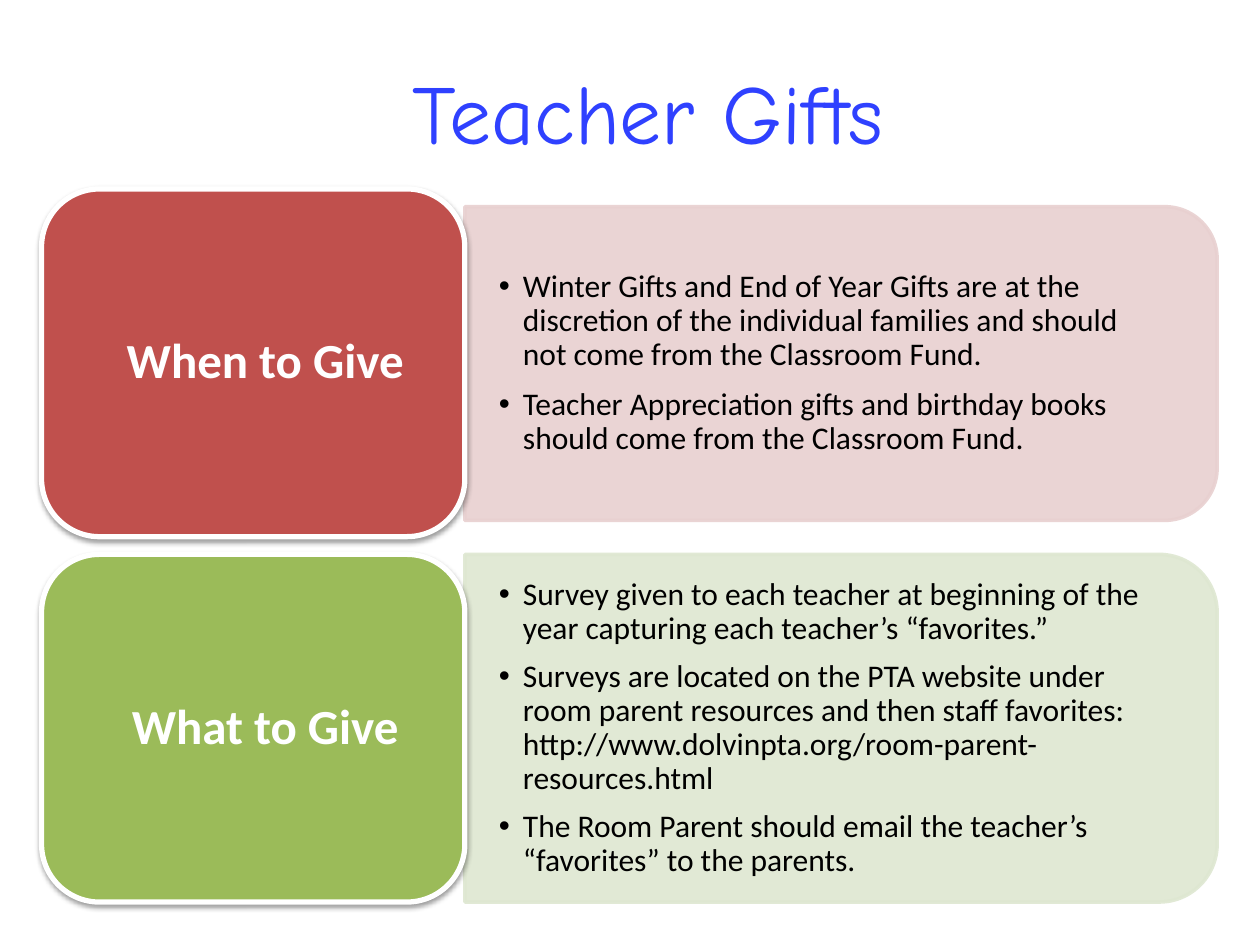
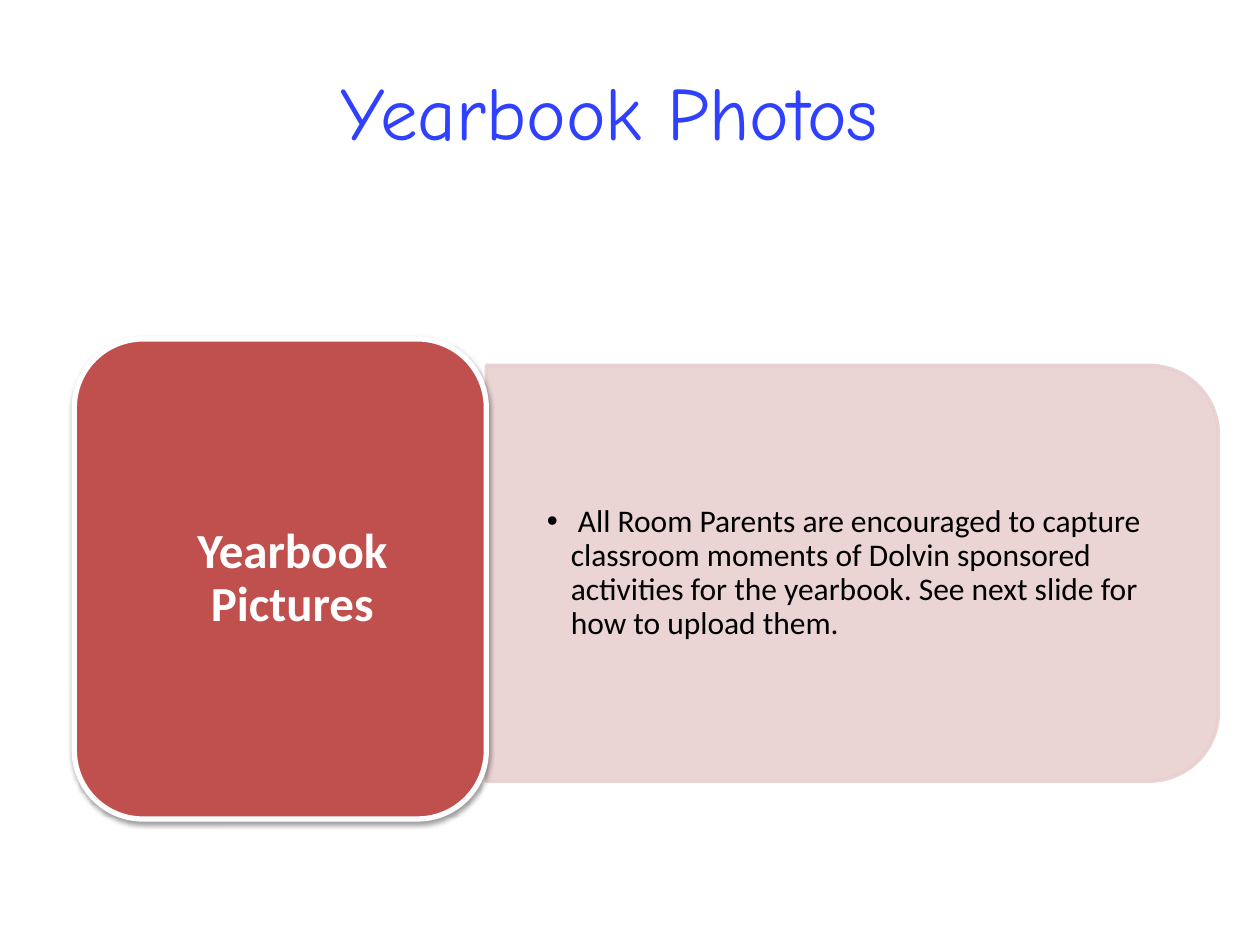
from dataclasses import dataclass

from lxml import etree
from pptx import Presentation
from pptx.dml.color import RGBColor
from pptx.enum.shapes import MSO_SHAPE
from pptx.enum.text import MSO_ANCHOR, MSO_AUTO_SIZE, PP_ALIGN
from pptx.oxml.ns import qn
from pptx.util import Inches, Pt

ROUND_RECT = MSO_SHAPE.ROUNDED_RECTANGLE
ROUND_TOP = MSO_SHAPE.ROUND_2_SAME_RECTANGLE
MIDDLE = MSO_ANCHOR.MIDDLE
NO_FIT = MSO_AUTO_SIZE.NONE
CENTER = PP_ALIGN.CENTER

BLUE = RGBColor(0x2F, 0x41, 0xFF)
RED = RGBColor(0xC0, 0x50, 0x4D)
PALE_RED = RGBColor(0xE8, 0xD0, 0xD0)
GREEN = RGBColor(0x9B, 0xBB, 0x59)
PALE_GREEN = RGBColor(0xDE, 0xE7, 0xD1)
WHITE = RGBColor(0xFF, 0xFF, 0xFF)
BLACK = RGBColor(0, 0, 0)

TITLE_FONT = "Comic Neue"
BODY_FONT = "Calibri"
ONE_CONTENT, TWO_CONTENT = 1, 3
CORNER_INSET = 0.0488
HANGING = 0.19


@dataclass
class Topic:
    """A coloured label with a pale panel of bullets to its right."""
    label: str
    bullets: list
    color: RGBColor
    pale: RGBColor
    left: float
    top: float
    width: float
    height: float
    panel_top: float
    panel_width: float
    panel_height: float
    indent: float = HANGING
    gap: float = 8.9


GIFT_TOPICS = [
    Topic("When to Give", [
        "Winter Gifts and End of Year Gifts are at the discretion of the "
        "individual families and should not come from the Classroom Fund.",
        "Teacher Appreciation gifts and birthday books should come from the "
        "Classroom Fund.",
    ], RED, PALE_RED, 0.33, 1.5, 3.36, 2.76, 1.64, 5.97, 2.49),
    Topic("What to Give", [
        "Survey given to each teacher at beginning of the year capturing each "
        "teacher’s “favorites.”",
        "Surveys are located on the PTA website under room parent resources and "
        "then staff favorites: http://www.dolvinpta.org/room-parent-resources.html",
        "The Room Parent should email the teacher’s “favorites” to the parents.",
    ], GREEN, PALE_GREEN, 0.33, 4.4, 3.36, 2.76, 4.4, 5.97, 2.76, gap=8),
]
YEARBOOK_TOPICS = [
    Topic("Yearbook Pictures", [
        " All Room Parents are encouraged to capture classroom moments of Dolvin "
        "sponsored activities for the yearbook. See next slide for how to upload "
        "them.",
    ], RED, PALE_RED, 0.59, 2.69, 3.27, 3.81, 2.9, 5.81, 3.3, indent=0.4, gap=6),
]


def place(shape, left, top, width, height):
    """Move a shape to a box given in inches."""
    shape.left, shape.top = Inches(left), Inches(top)
    shape.width, shape.height = Inches(width), Inches(height)


def set_frame(frame, side, edge):
    """Wrap and centre a text frame vertically with the given insets."""
    frame.word_wrap = True
    frame.auto_size = NO_FIT
    frame.vertical_anchor = MIDDLE
    frame.margin_left = frame.margin_right = Inches(side)
    frame.margin_top = frame.margin_bottom = Inches(edge)


def style_runs(paragraph, font, size, color, bold=False):
    """Format every run of a paragraph."""
    for run in paragraph.runs:
        run.font.name, run.font.size, run.font.bold = font, Pt(size), bold
        run.font.color.rgb = color


def space_paragraph(paragraph, indent, first_line, after):
    """Set indents in inches and tight line spacing."""
    paragraph.line_spacing = 0.9
    paragraph.space_before = Pt(0)
    paragraph.space_after = Pt(after)
    properties = paragraph._p.get_or_add_pPr()
    properties.set("marL", str(Inches(indent)))
    properties.set("indent", str(Inches(first_line)))


def add_drop_shadow(shape):
    """Give a shape a soft shadow straight below it."""
    shape.shadow.inherit = False
    effects = shape._element.spPr.find(qn("a:effectLst"))
    shadow = etree.SubElement(effects, qn("a:outerShdw"), blurRad=str(Pt(3.1)),
                              dist=str(Pt(1.6)), dir="5400000", rotWithShape="0")
    black = etree.SubElement(shadow, qn("a:srgbClr"), val=str(BLACK))
    etree.SubElement(black, qn("a:alpha"), val="38000")


def add_panel(slide, topic):
    """Draw the pale panel, rounded on its right side."""
    width, height = topic.panel_width, topic.panel_height
    shift = (width - height) / 2
    panel = slide.shapes.add_shape(
        ROUND_TOP, Inches(topic.left + topic.width + shift),
        Inches(topic.panel_top - shift), Inches(height), Inches(width))
    panel.rotation = 90
    panel.shadow.inherit = False
    panel.fill.solid()
    panel.fill.fore_color.rgb = topic.pale
    panel.line.color.rgb = topic.pale
    panel.line.width = Pt(2)
    for color in panel._element.spPr.iter(qn("a:srgbClr")):
        etree.SubElement(color, qn("a:alpha"), val="90000")


def fill_bullets(slide, body, topic):
    """Lay the body placeholder over the panel and list the bullets."""
    inset = topic.panel_height * CORNER_INSET
    place(body, topic.left + topic.width, topic.panel_top + inset,
          topic.panel_width - inset, topic.panel_height - 2 * inset)
    slide.shapes._spTree.append(body._element)
    frame = body.text_frame
    set_frame(frame, 0.27, 0.14)
    frame.text = "\n".join(topic.bullets)
    for paragraph in frame.paragraphs:
        space_paragraph(paragraph, topic.indent, -HANGING, topic.gap)
        style_runs(paragraph, BODY_FONT, 18, BLACK)


def add_label(slide, topic):
    """Draw the coloured label with its white border."""
    label = slide.shapes.add_shape(
        ROUND_RECT, Inches(topic.left), Inches(topic.top),
        Inches(topic.width), Inches(topic.height))
    label.fill.solid()
    label.fill.fore_color.rgb = topic.color
    label.line.color.rgb = WHITE
    label.line.width = Pt(3)
    add_drop_shadow(label)
    set_frame(label.text_frame, 0.12, 0.06)
    label.text_frame.text = topic.label
    paragraph = label.text_frame.paragraphs[0]
    paragraph.alignment = CENTER
    space_paragraph(paragraph, HANGING, 0, 2.9)
    style_runs(paragraph, BODY_FONT, 28, WHITE, bold=True)


def set_title(slide, text, size, left_inset):
    """Write the slide title in the shared style."""
    title = slide.shapes.title
    place(title, 0.17, 0.17, 9.33, 1.42)
    set_frame(title.text_frame, 0.1, 0.05)
    title.text_frame.margin_left = Inches(left_inset)
    title.text_frame.text = text
    paragraph = title.text_frame.paragraphs[0]
    paragraph.alignment = CENTER
    style_runs(paragraph, TITLE_FONT, size, BLUE)


def add_topic_slide(deck, layout, title, size, topics, title_inset=0.1):
    """Add a slide with a title and one row for each topic."""
    slide = deck.slides.add_slide(deck.slide_layouts[layout])
    set_title(slide, title, size, title_inset)
    bodies = list(slide.placeholders)[1:]
    for body, topic in zip(bodies, topics):
        add_panel(slide, topic)
        fill_bullets(slide, body, topic)
        add_label(slide, topic)


def main():
    """Build and save the deck."""
    deck = Presentation()
    deck.slide_width, deck.slide_height = Inches(10), Inches(7.5)
    add_topic_slide(deck, TWO_CONTENT, "Teacher Gifts", 47.8, GIFT_TOPICS,
                    title_inset=0.72)
    add_topic_slide(deck, ONE_CONTENT, "Yearbook Photos", 42.9, YEARBOOK_TOPICS)
    deck.save("out.pptx")


if __name__ == "__main__":
    main()
